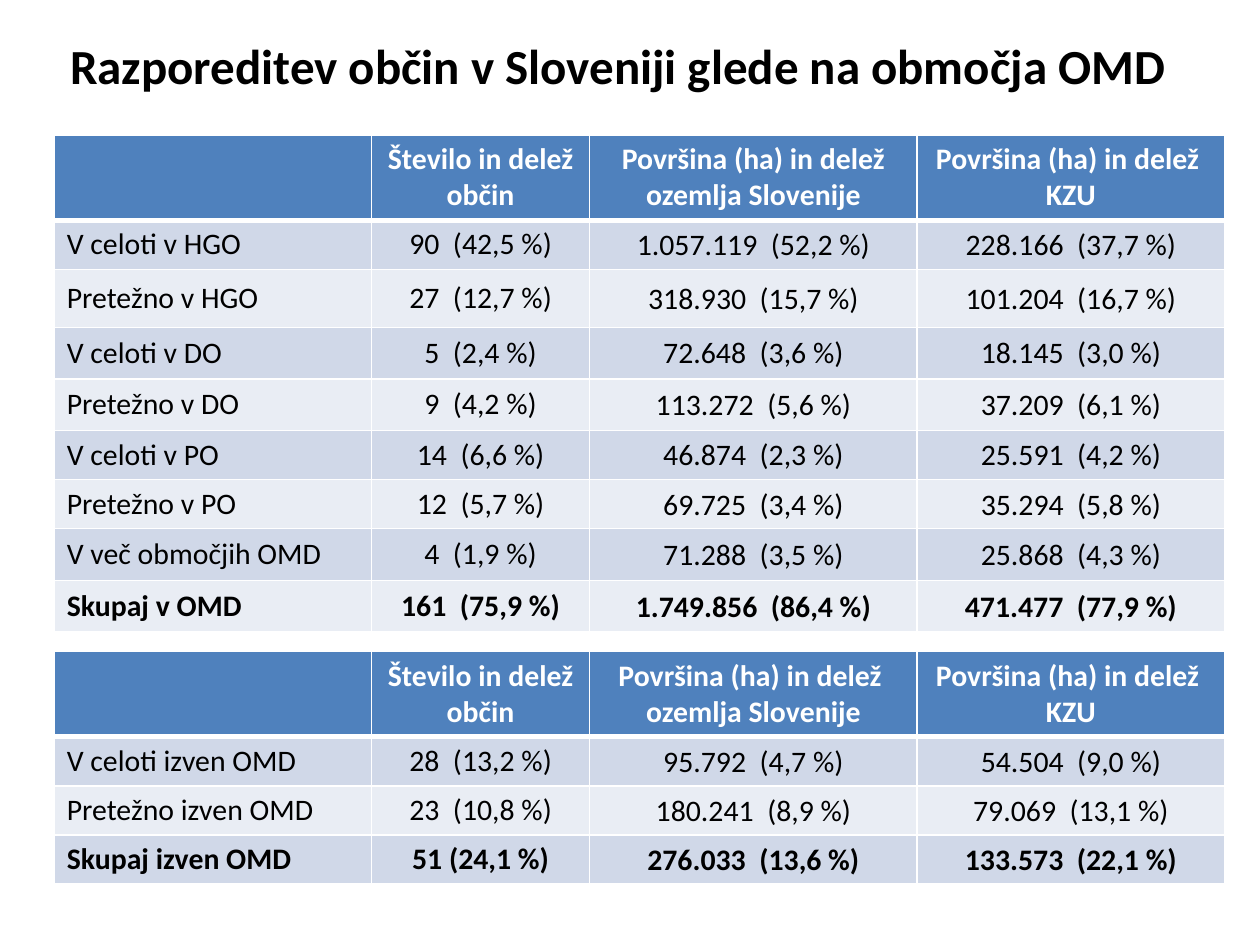
from dataclasses import dataclass

from lxml import etree
from pptx import Presentation
from pptx.dml.color import RGBColor
from pptx.enum.text import MSO_ANCHOR, PP_ALIGN
from pptx.oxml.ns import qn
from pptx.util import Inches, Pt

MIDDLE, TOP = MSO_ANCHOR.MIDDLE, MSO_ANCHOR.TOP
LEFT, CENTER = PP_ALIGN.LEFT, PP_ALIGN.CENTER
TITLE_ONLY = 5


@dataclass(frozen=True)
class Theme:
    font: str = "Calibri"
    title_size: int = 28
    table_size: int = 17
    ink: str = "000000"
    paper: str = "FFFFFF"
    header: str = "4F81BD"
    bands: tuple = ("D0D8E8", "E9EDF4")
    rule: int = 1
    header_rule: int = 3


THEME = Theme()
TABLE_LEFT = 0.43
COLUMNS = (2.52, 1.73, 2.6, 2.44)
HEADER_HEIGHT = 0.67

INSIDE = {
    "top": 1.07,
    "header": ("", "Število in delež občin",
               "Površina (ha) in delež ozemlja Slovenije",
               "Površina (ha) in delež  KZU"),
    "heights": (0.39, 0.46, 0.41, 0.41, 0.39, 0.39, 0.41, 0.41),
    "body": (
        ("V celoti v HGO", "90  (42,5 %)", "1.057.119  (52,2 %)", "228.166  (37,7 %)"),
        ("Pretežno v HGO", "27  (12,7 %)", "318.930  (15,7 %)", "101.204  (16,7 %)"),
        ("V celoti v DO", "5  (2,4 %)", "72.648  (3,6 %)", "18.145  (3,0 %)"),
        ("Pretežno v DO", "9  (4,2 %)", "113.272  (5,6 %)", "37.209  (6,1 %)"),
        ("V celoti v PO", "14  (6,6 %)", "46.874  (2,3 %)", "25.591  (4,2 %)"),
        ("Pretežno v PO", "12  (5,7 %)", "69.725  (3,4 %)", "35.294  (5,8 %)"),
        ("V več območjih OMD", "4  (1,9 %)", "71.288  (3,5 %)", "25.868  (4,3 %)"),
        ("Skupaj v OMD", "161  (75,9 %)", "1.749.856  (86,4 %)", "471.477  (77,9 %)"),
    ),
}
OUTSIDE = {
    "top": 5.17,
    "header": ("", "Število in delež občin",
               "Površina (ha) in delež  ozemlja Slovenije",
               "Površina (ha) in delež  KZU"),
    "heights": (0.39, 0.39, 0.39),
    "body": (
        ("V celoti izven OMD", "28  (13,2 %)", "95.792  (4,7 %)", "54.504  (9,0 %)"),
        ("Pretežno izven OMD", "23  (10,8 %)", "180.241  (8,9 %)", "79.069  (13,1 %)"),
        ("Skupaj izven OMD", "51 (24,1 %)", "276.033  (13,6 %)", "133.573  (22,1 %)"),
    ),
}


def format_text(frame, size, color, bold, align):
    for para in frame.paragraphs:
        para.alignment = align
        for span in para.runs:
            span.font.name = THEME.font
            span.font.size = Pt(size)
            span.font.bold = bold
            span.font.color.rgb = RGBColor.from_string(color)


def add_borders(cell, top, bottom):
    """Rule all four sides; border lines must precede the fill in tcPr."""
    properties = cell._tc.get_or_add_tcPr()
    widths = {"a:lnL": THEME.rule, "a:lnR": THEME.rule, "a:lnT": top, "a:lnB": bottom}
    for index, (tag, width) in enumerate(widths.items()):
        line = etree.Element(qn(tag), w=str(Pt(width)))
        fill = etree.SubElement(line, qn("a:solidFill"))
        etree.SubElement(fill, qn("a:srgbClr"), val=THEME.paper)
        properties.insert(index, line)


def fill_cell(cell, text, row, column, is_total):
    is_header = row == 0
    cell.text_frame.text = text
    format_text(cell.text_frame, THEME.table_size,
                THEME.paper if is_header else THEME.ink,
                is_header or is_total,
                CENTER if is_header or column else LEFT)
    cell.vertical_anchor = TOP if is_header else MIDDLE
    if not is_header and column >= 2:
        cell.margin_left = cell.margin_right = cell.margin_top = Inches(0.01)
        cell.margin_bottom = 0
    cell.fill.solid()
    color = THEME.header if is_header else THEME.bands[(row - 1) % 2]
    cell.fill.fore_color.rgb = RGBColor.from_string(color)
    add_borders(cell,
                THEME.header_rule if row == 1 else THEME.rule,
                THEME.header_rule if is_header else THEME.rule)


def add_area_table(page, data):
    rows = (data["header"], *data["body"])
    heights = (HEADER_HEIGHT, *data["heights"])
    frame = page.shapes.add_table(
        len(rows), len(COLUMNS), Inches(TABLE_LEFT), Inches(data["top"]),
        Inches(sum(COLUMNS)), Inches(sum(heights)))
    table = frame.table
    for column, width in zip(table.columns, COLUMNS):
        column.width = Inches(width)
    for index, (values, height) in enumerate(zip(rows, heights)):
        table.rows[index].height = Inches(height)
        for column, text in enumerate(values):
            fill_cell(table.cell(index, column), text, index, column,
                      index == len(rows) - 1)


def set_title(page, text):
    title = page.shapes.title
    title.left, title.top = 0, Inches(0.13)
    title.width, title.height = Inches(9.8), Inches(0.77)
    title.text_frame.text = text
    title.text_frame.vertical_anchor = MIDDLE
    format_text(title.text_frame, THEME.title_size, THEME.ink, True, CENTER)


def main():
    deck = Presentation()
    deck.slide_width, deck.slide_height = Inches(10), Inches(7.5)
    page = deck.slides.add_slide(deck.slide_layouts[TITLE_ONLY])
    set_title(page, "Razporeditev občin v Sloveniji glede na območja OMD")
    for data in (INSIDE, OUTSIDE):
        add_area_table(page, data)
    deck.save("out.pptx")


if __name__ == "__main__":
    main()
